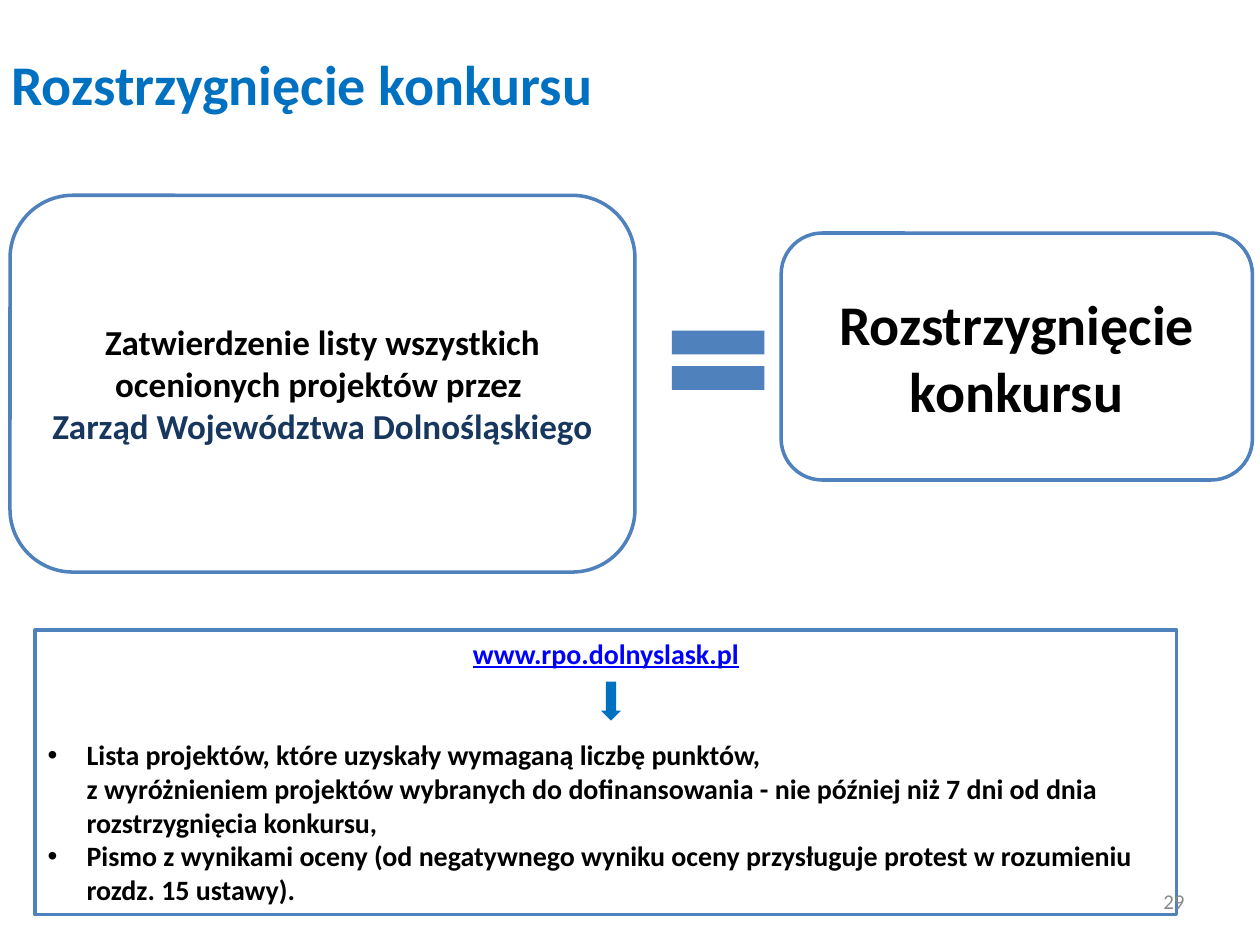
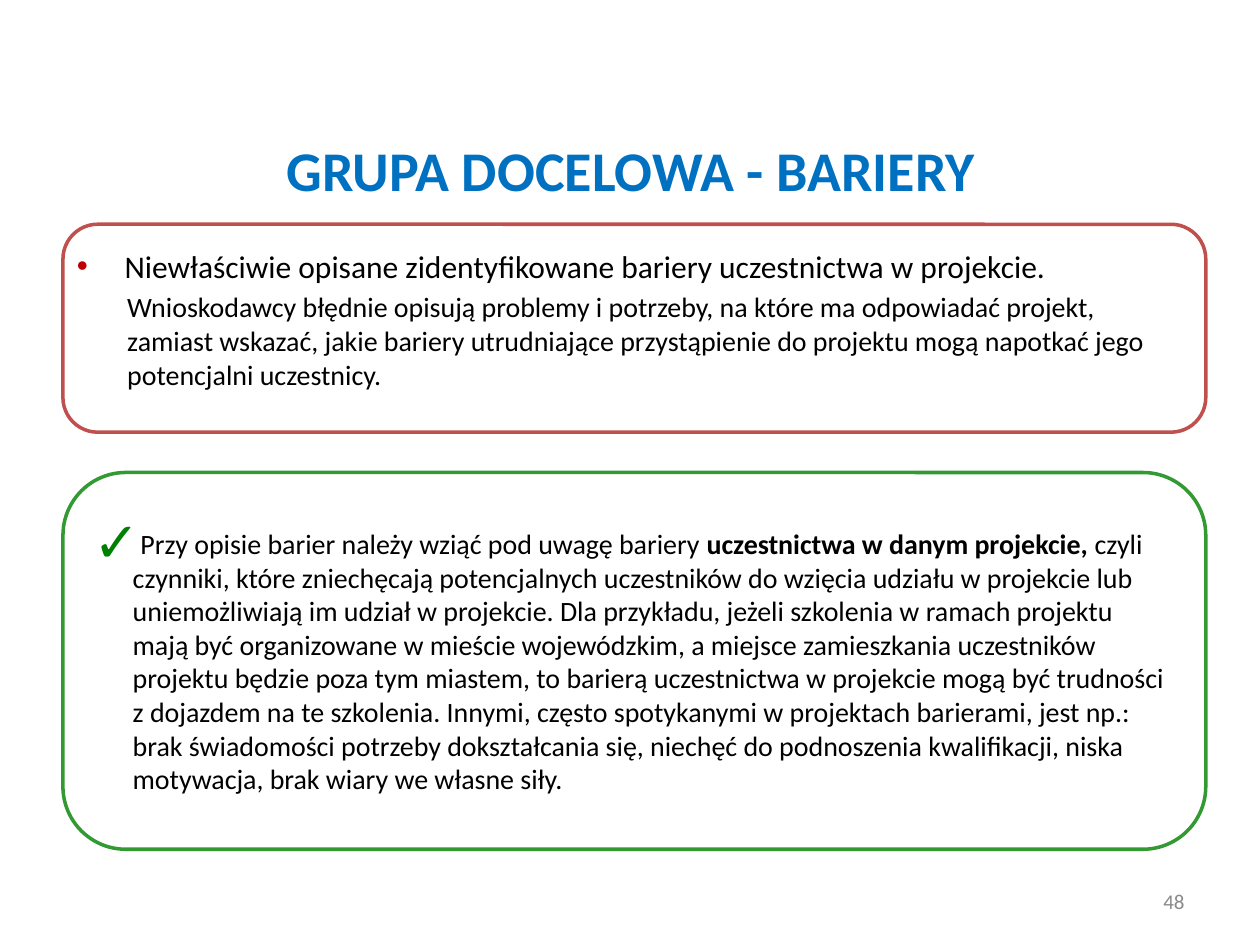
from lxml import etree
from pptx import Presentation
from pptx import util as u
from pptx.dml.color import RGBColor
from pptx.enum import shapes, text
from pptx.oxml.ns import qn

PX = 9144  # EMU per px, 100 px to the inch
FONT = "Calibri"
TITLE_BLUE = RGBColor(0x00, 0x70, 0xC0)
LINE_BLUE = RGBColor(0x4F, 0x81, 0xBD)
NAVY = RGBColor(0x17, 0x37, 0x5E)
LINK = RGBColor(0x00, 0x00, 0xFF)
RED = RGBColor(0xC0, 0x50, 0x4D)
BULLET_RED = RGBColor(0xC0, 0x00, 0x00)
GREEN = RGBColor(0x33, 0x99, 0x33)
TICK_GREEN = RGBColor(0x00, 0x80, 0x00)
GREY = RGBColor(0x89, 0x89, 0x89)
BLACK = RGBColor(0x00, 0x00, 0x00)
WHITE = RGBColor(0xFF, 0xFF, 0xFF)
LEFT, CENTER, RIGHT = text.PP_ALIGN.LEFT, text.PP_ALIGN.CENTER, text.PP_ALIGN.RIGHT
TOP, MIDDLE = text.MSO_ANCHOR.TOP, text.MSO_ANCHOR.MIDDLE
ROUNDED = shapes.MSO_SHAPE.ROUNDED_RECTANGLE


def write(para, spans, size, color=BLACK, align=LEFT, before=0,
          indent=0, bullet=None, bullet_color=None, bullet_size=100):
    """Fill a paragraph with (wording, bold) spans; a newline breaks the line."""
    props = para._p.get_or_add_pPr()
    props.set("marL", str(indent * PX))
    props.set("indent", str(-indent * PX if bullet else 0))
    if bullet:
        if bullet_color is not None:
            clr = etree.SubElement(props, qn("a:buClr"))
            etree.SubElement(clr, qn("a:srgbClr"), val=str(bullet_color))
        etree.SubElement(props, qn("a:buSzPct"), val=str(bullet_size * 1000))
        etree.SubElement(props, qn("a:buFont"), typeface="Arial")
        etree.SubElement(props, qn("a:buChar"), char=bullet)
    else:
        etree.SubElement(props, qn("a:buNone"))
    para.alignment = align
    para.space_before = u.Pt(before)
    for wording, bold in spans:
        for number, line in enumerate(wording.split("\n")):
            if number:
                para.add_line_break()
            span = para.add_run()
            span.text = line
            span.font.name, span.font.size = FONT, u.Pt(size)
            span.font.bold = bold
            span.font.color.rgb = color


def add_panel(page, kind, at, fill=None, line=None, anchor=MIDDLE):
    """Add a preset shape and return its text frame."""
    panel = page.shapes.add_shape(kind, *[n * PX for n in at])
    panel.shadow.inherit = False
    if fill is None:
        panel.fill.background()
    else:
        panel.fill.solid()
        panel.fill.fore_color.rgb = fill
    if line is None:
        panel.line.fill.background()
    else:
        panel.line.color.rgb = line
        panel.line.width = u.Pt(2)
    panel.text_frame.word_wrap = True
    panel.text_frame.vertical_anchor = anchor
    return panel.text_frame


deck = Presentation()
deck.slide_width, deck.slide_height = 1000 * PX, 750 * PX

# Pages with their titles
pages = []
for layout, at, heading, align, anchor, spacing in [
    (5, (-1, 40, 535, 66), "Rozstrzygnięcie konkursu", LEFT, TOP, 0.9),
    (1, (51, 107, 900, 55), "GRUPA DOCELOWA - BARIERY", CENTER, MIDDLE, 1.0),
]:
    page = deck.slides.add_slide(deck.slide_layouts[layout])
    title = page.shapes.title
    title.left, title.top, title.width, title.height = [n * PX for n in at]
    title.text_frame.auto_size = text.MSO_AUTO_SIZE.NONE
    title.text_frame.vertical_anchor = anchor
    title.text_frame.word_wrap = align == CENTER
    para = title.text_frame.paragraphs[0]
    write(para, [(heading, True)], 32, TITLE_BLUE, align)
    para.line_spacing = spacing
    pages.append(page)
contest, barriers = pages

# Contest: approval equals result
result = add_panel(contest, ROUNDED, (620, 185, 374, 196), WHITE, LINE_BLUE)
write(result.paragraphs[0], [("Rozstrzygnięcie konkursu", True)], 32, align=CENTER)
add_panel(contest, shapes.MSO_SHAPE.MATH_EQUAL, (520, 246, 100, 80), LINE_BLUE)
approval = add_panel(contest, ROUNDED, (8, 155, 496, 299), WHITE, LINE_BLUE)
write(approval.paragraphs[0],
      [("Zatwierdzenie listy wszystkich ocenionych projektów przez ", True)],
      20, align=CENTER)
write(approval.add_paragraph(), [("Zarząd Województwa Dolnośląskiego", True)],
      20, NAVY, CENTER)

# Contest: what is published on the site
published = add_panel(contest, shapes.MSO_SHAPE.RECTANGLE, (28, 500, 906, 226),
                      WHITE, LINE_BLUE, TOP)
site = published.paragraphs[0]
write(site, [("www.rpo.dolnyslask.pl", True)], 16, LINK, CENTER)
site.runs[0].font.underline = True
for item, before in [
    ("Lista projektów, które uzyskały wymaganą liczbę punktów, \n"
     "z wyróżnieniem projektów wybranych do dofinansowania - nie później niż 7 dni "
     "od dnia rozstrzygnięcia konkursu,", 39),
    ("Pismo z wynikami oceny (od negatywnego wyniku oceny przysługuje protest "
     "w rozumieniu rozdz. 15 ustawy).", 0),
]:
    write(published.add_paragraph(), [(item, True)], 16, before=before,
          indent=31, bullet="•")
add_panel(contest, shapes.MSO_SHAPE.DOWN_ARROW, (477, 541, 16, 31), TITLE_BLUE)

# Barriers: the mistake
add_panel(barriers, ROUNDED, (50, 178, 907, 165), line=RED)
body = barriers.placeholders[1]
body.left, body.top, body.width, body.height = [n * PX for n in (51, 155, 900, 244)]
mistake = body.text_frame
mistake.auto_size = text.MSO_AUTO_SIZE.NONE
mistake.vertical_anchor = TOP
mistake.margin_top = 41 * PX
write(mistake.paragraphs[0],
      [("Niewłaściwie opisane zidentyfikowane bariery uczestnictwa w projekcie.", False)],
      18, indent=38, bullet="•", bullet_color=BULLET_RED)
write(mistake.add_paragraph(),
      [("Wnioskodawcy błędnie opisują problemy i potrzeby, na które ma odpowiadać projekt, "
        "zamiast wskazać, jakie bariery utrudniające przystąpienie do projektu mogą "
        "napotkać jego potencjalni uczestnicy.", False)],
      16, before=3, indent=40)

# Barriers: the advice
advice = add_panel(barriers, ROUNDED, (50, 375, 907, 299), line=GREEN)
write(advice.paragraphs[0], [
    ("Przy opisie barier należy wziąć pod uwagę bariery ", False),
    ("uczestnictwa w danym projekcie,", True),
    (" czyli czynniki, które zniechęcają potencjalnych uczestników do wzięcia udziału "
     "w projekcie lub uniemożliwiają im udział w projekcie. Dla przykładu, jeżeli "
     "szkolenia w ramach projektu mają być organizowane w mieście wojewódzkim, "
     "a miejsce zamieszkania uczestników projektu będzie poza tym miastem, to barierą "
     "uczestnictwa w projekcie mogą być trudności z dojazdem na te szkolenia. Innymi, "
     "często spotykanymi w projektach barierami, jest np.: brak świadomości potrzeby "
     "dokształcania się, niechęć do podnoszenia kwalifikacji, niska motywacja, brak "
     "wiary we własne siły.", False),
], 16, indent=31, bullet="✓", bullet_color=TICK_GREEN, bullet_size=200)

# Page numbers
for page, number in zip(pages, ("29", "48")):
    box = page.shapes.add_textbox(*[n * PX for n in (717, 695, 233, 40)])
    box.text_frame.word_wrap = True
    box.text_frame.vertical_anchor = MIDDLE
    write(box.text_frame.paragraphs[0], [(number, False)], 12, GREY, RIGHT)

deck.save("out.pptx")
